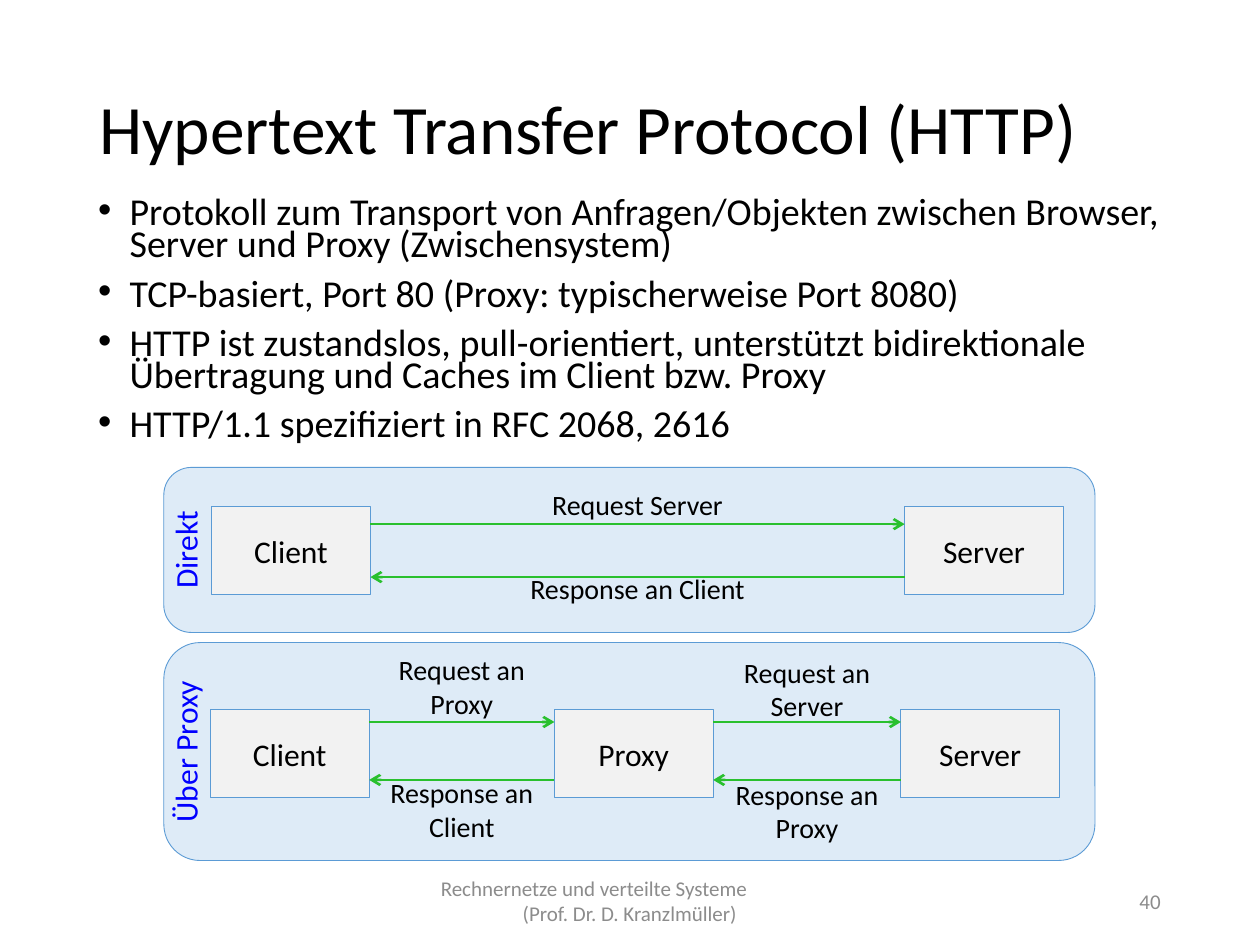
"""Build the slide on HTTP with its direct and proxied message exchanges."""
from dataclasses import dataclass

from lxml import etree
from pptx import Presentation
from pptx.dml.color import RGBColor
from pptx.enum.shapes import MSO_CONNECTOR, MSO_SHAPE
from pptx.enum.text import MSO_ANCHOR, PP_ALIGN
from pptx.oxml.ns import qn
from pptx.util import Inches, Pt

BLACK = RGBColor(0x00, 0x00, 0x00)
GRAY = RGBColor(0x8C, 0x8C, 0x8C)
BLUE = RGBColor(0x00, 0x00, 0xFF)
GREEN = RGBColor(0x29, 0xC0, 0x2E)
BORDER = RGBColor(0x5B, 0x9B, 0xD5)
PANEL_FILL = RGBColor(0xDE, 0xEB, 0xF7)
NODE_FILL = RGBColor(0xF2, 0xF2, 0xF2)
LEFT, CENTER, RIGHT = PP_ALIGN.LEFT, PP_ALIGN.CENTER, PP_ALIGN.RIGHT
TOP, MIDDLE = MSO_ANCHOR.TOP, MSO_ANCHOR.MIDDLE
RECTANGLE, ROUNDED = MSO_SHAPE.RECTANGLE, MSO_SHAPE.ROUNDED_RECTANGLE
STRAIGHT = MSO_CONNECTOR.STRAIGHT

WIDTH, HEIGHT = Inches(10), Inches(7.5)
COLUMN, ROW = WIDTH / 100, HEIGHT / 75
PANEL_LEFT, PANEL_WIDTH = 13, 73.9
NODE_WIDTH, NODE_HEIGHT = 12.6, 7
CAPTION_CENTER, CAPTION_HEIGHT = 14.7, 4


@dataclass(frozen=True)
class Area:
    """A rectangle in grid columns and rows."""
    left: float
    top: float
    width: float
    height: float

    def emu(self) -> tuple[int, int, int, int]:
        """Return the rectangle in slide units."""
        return (round(self.left * COLUMN), round(self.top * ROW),
                round(self.width * COLUMN), round(self.height * ROW))


@dataclass(frozen=True)
class Message:
    """The label of one arrow and the row where it starts."""
    text: str
    top: float


@dataclass(frozen=True)
class Panel:
    """One way of communicating, with nodes and the messages between them."""
    caption: str
    top: float
    height: float
    node_top: float
    nodes: tuple[tuple[str, float], ...]
    request_row: float
    response_row: float
    label_height: float
    requests: tuple[Message, ...]
    responses: tuple[Message, ...]


BULLETS = (
    "Protokoll zum Transport von Anfragen/Objekten zwischen Browser, "
    "Server und Proxy (Zwischensystem)",
    "TCP-basiert, Port 80 (Proxy: typischerweise Port 8080)",
    "HTTP ist zustandslos, pull-orientiert, unterstützt bidirektionale "
    "Übertragung und Caches im Client bzw. Proxy",
    "HTTP/1.1 spezifiziert in RFC 2068, 2616",
)
PANELS = (
    Panel("Direkt", 37.1, 13.1, 40.2, (("Client", 16.8), ("Server", 71.8)),
          41.6, 45.8, 3.7,
          (Message("Request Server", 38.2),),
          (Message("Response an Client", 44.9),)),
    Panel("Über Proxy", 51, 17.3, 56.3,
          (("Client", 16.7), ("Proxy", 44), ("Server", 71.5)),
          57.3, 61.9, 6.4,
          (Message("Request an Proxy", 51.3), Message("Request an Server", 51.5)),
          (Message("Response an Client", 61.1), Message("Response an Proxy", 61.2))),
)


def apply_format(target, values: dict) -> None:
    """Set each named attribute on the target."""
    for name, value in values.items():
        setattr(target, name, value)


def write(box, lines: tuple[str, ...], size: float, color=BLACK,
          align=CENTER, anchor=TOP) -> None:
    """Fill a box with one paragraph for each line."""
    frame = box.text_frame
    apply_format(frame, {"word_wrap": True, "vertical_anchor": anchor})
    for index, line in enumerate(lines):
        para = frame.add_paragraph() if index else frame.paragraphs[0]
        apply_format(para, {"text": line, "alignment": align})
        for span in para.runs:
            apply_format(span.font, {"name": "Calibri", "size": Pt(size)})
            span.font.color.rgb = color


def add_text(slide, area: Area, *lines: str, **style):
    """Add a text box and return it."""
    box = slide.shapes.add_textbox(*area.emu())
    write(box, lines, **style)
    return box


def add_block(slide, kind, area: Area, fill: RGBColor):
    """Add a thinly outlined shape and return it."""
    block = slide.shapes.add_shape(kind, *area.emu())
    block.shadow.inherit = False
    block.fill.solid()
    block.fill.fore_color.rgb = fill
    block.line.color.rgb = BORDER
    block.line.width = Pt(0.5)
    return block


def add_arrow(slide, start: float, end: float, row: float) -> None:
    """Draw a horizontal arrow between two columns."""
    height = round(row * ROW)
    arrow = slide.shapes.add_connector(
        STRAIGHT, round(start * COLUMN), height, round(end * COLUMN), height)
    arrow.line.color.rgb = GREEN
    arrow.line.width = Pt(1.5)
    etree.SubElement(arrow.line._get_or_add_ln(), qn("a:tailEnd"), type="arrow")
    etree.SubElement(arrow._element.spPr, qn("a:effectLst"))


def indent(para, margin: float, first: float) -> None:
    """Set the left margin and first line indent in inches."""
    properties = para._p.get_or_add_pPr()
    properties.set("marL", str(Inches(margin)))
    properties.set("indent", str(Inches(first)))


def add_bullets(slide, area: Area) -> None:
    """Add the tightly set bullet list."""
    box = add_text(slide, area, *BULLETS, size=21.7, align=LEFT)
    for index, para in enumerate(box.text_frame.paragraphs):
        indent(para, 0.25, -0.25)
        properties = para._p.get_or_add_pPr()
        etree.SubElement(properties, qn("a:buFont"), typeface="Arial")
        etree.SubElement(properties, qn("a:buChar"), char="•")
        apply_format(para, {"line_spacing": 0.7,
                            "space_before": Pt(10 if index else 0)})


def add_panel(slide, panel: Panel) -> None:
    """Draw a panel with its caption, nodes, arrows and labels."""
    add_block(slide, ROUNDED,
              Area(PANEL_LEFT, panel.top, PANEL_WIDTH, panel.height), PANEL_FILL)
    caption = add_text(
        slide, Area(CAPTION_CENTER - panel.height / 2,
                    panel.top + (panel.height - CAPTION_HEIGHT) / 2,
                    panel.height, CAPTION_HEIGHT),
        panel.caption, size=18, color=BLUE)
    caption.rotation = 270
    for name, left in panel.nodes:
        node = add_block(slide, RECTANGLE,
                         Area(left, panel.node_top, NODE_WIDTH, NODE_HEIGHT), NODE_FILL)
        write(node, (name,), 18, anchor=MIDDLE)
    pairs = zip(panel.nodes, panel.nodes[1:], panel.requests, panel.responses)
    for (_, left), (_, end), request, response in pairs:
        start = left + NODE_WIDTH
        add_arrow(slide, start, end, panel.request_row)
        add_arrow(slide, end, start, panel.response_row)
        for message in (request, response):
            add_text(slide, Area(start, message.top, end - start, panel.label_height),
                     message.text, size=16)


def main() -> None:
    """Build and save the deck."""
    deck = Presentation()
    apply_format(deck, {"slide_width": WIDTH, "slide_height": HEIGHT})
    slide = deck.slides.add_slide(deck.slide_layouts[6])
    title = add_text(slide, Area(6.9, 4, 86.2, 13), "Hypertext Transfer Protocol (HTTP)",
                     size=39.6, align=LEFT, anchor=MIDDLE)
    title.text_frame.paragraphs[0].line_spacing = 0.9
    footer = add_text(slide, Area(33.1, 69.5, 33.8, 4),
                      "Rechnernetze und verteilte Systeme\v(Prof. Dr. D. Kranzlmüller)",
                      size=12, color=GRAY, align=LEFT, anchor=MIDDLE)
    indent(footer.text_frame.paragraphs[0], 0.74, -0.65)
    add_text(slide, Area(70.6, 69.5, 22.5, 4), "40",
             size=12, color=GRAY, align=RIGHT, anchor=MIDDLE)
    for panel in PANELS:
        add_panel(slide, panel)
    add_bullets(slide, Area(6.8, 15.4, 86.2, 21.7))
    deck.save("out.pptx")


if __name__ == "__main__":
    main()
